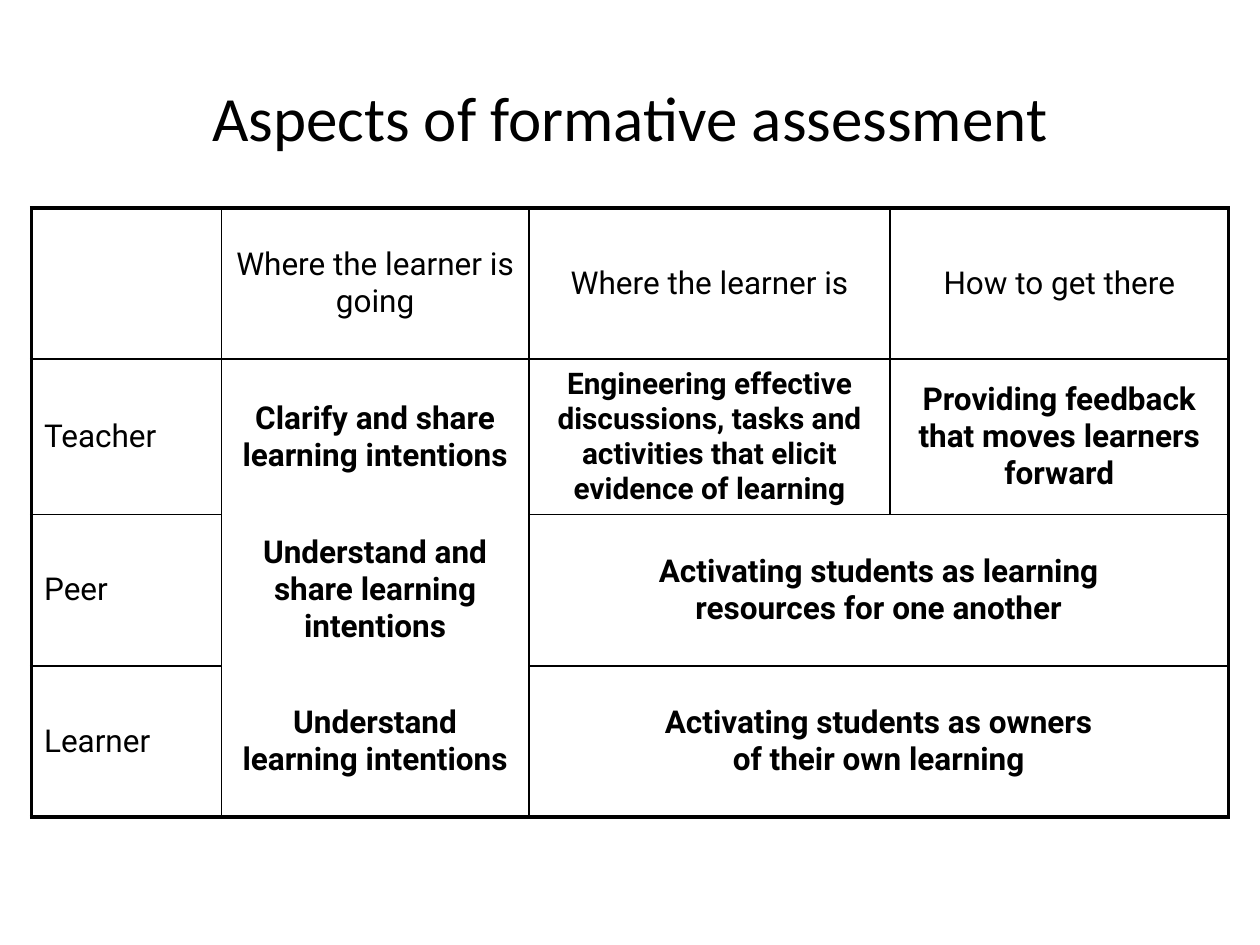
from dataclasses import dataclass

from lxml.etree import SubElement
from pptx import Presentation
from pptx.dml.color import RGBColor
from pptx.enum.text import MSO_ANCHOR, PP_ALIGN
from pptx.oxml.ns import qn
from pptx.util import Pt


@dataclass(frozen=True)
class Theme:
    ink: str = "000000"
    paper: str = "FFFFFF"
    title_font: str = "Calibri"
    table_font: str = "Roboto"
    title_size: float = 36
    cell_size: float = 18
    dense_size: float = 17
    frame_line: float = 2.25
    grid_line: float = 1


@dataclass(frozen=True)
class Box:
    left: float
    top: float
    width: float
    height: float

    def lengths(self):
        return Pt(self.left), Pt(self.top), Pt(self.width), Pt(self.height)


THEME = Theme()
COLUMN_WIDTHS = (108.5, 175.75, 206.5, 193.25)
ROW_HEIGHTS = (86.4, 88.6, 86.4, 86.4)
ASPECTS = (
    ("", "Where the learner is going", "Where the learner is", "How to get there"),
    ("Teacher", "Clarify and share learning intentions",
     "Engineering effective discussions, tasks and activities that elicit evidence of learning",
     "Providing feedback that moves learners forward"),
    ("Peer", "Understand and share learning intentions",
     "Activating students as learning\nresources for one another", ""),
    ("Learner", "Understand learning intentions",
     "Activating students as owners\vof their own learning", ""),
)
INTENTIONS_COLUMN = 1
DENSE_CELL = (1, 2)
MERGED_ROWS = (2, 3)


def write_text(frame, text, *, font, size, bold=False, align=PP_ALIGN.CENTER):
    frame.text = text
    for para in frame.paragraphs:
        para.alignment = align
        for span in para.runs:
            span.font.name = font
            span.font.size = Pt(size)
            span.font.bold = bold
            span.font.color.rgb = RGBColor.from_string(THEME.ink)


def draw_borders(cell, widths):
    properties = cell._tc.get_or_add_tcPr()
    for position, (side, width) in enumerate(widths.items()):
        line = SubElement(properties, qn(f"a:ln{side}"), w=str(Pt(width)))
        if width:
            fill = SubElement(line, qn("a:solidFill"))
            SubElement(fill, qn("a:srgbClr"), val=THEME.ink)
        else:
            SubElement(line, qn("a:noFill"))
        properties.insert(position, line)


def border_widths(row, column, merged):
    last_row, last_column = len(ROW_HEIGHTS) - 1, len(COLUMN_WIDTHS) - 1
    open_column = column == INTENTIONS_COLUMN
    inner_top = 0 if open_column and row > 1 else THEME.grid_line
    inner_bottom = 0 if open_column and row > 0 else THEME.grid_line
    if open_column and row == 0:
        inner_bottom = THEME.grid_line
    at_right = column == last_column or merged
    return {
        "L": THEME.frame_line if column == 0 else THEME.grid_line,
        "R": THEME.frame_line if at_right else THEME.grid_line,
        "T": THEME.frame_line if row == 0 else inner_top,
        "B": THEME.frame_line if row == last_row else inner_bottom,
    }


def add_title(page, box, text):
    frame = page.shapes.add_textbox(*box.lengths()).text_frame
    frame.word_wrap = True
    frame.vertical_anchor = MSO_ANCHOR.MIDDLE
    write_text(frame, text, font=THEME.title_font, size=THEME.title_size)


def add_aspects_table(page, box):
    table = page.shapes.add_table(
        len(ROW_HEIGHTS), len(COLUMN_WIDTHS), *box.lengths()).table
    table.first_row = table.horz_banding = False
    for column, width in zip(table.columns, COLUMN_WIDTHS):
        column.width = Pt(width * box.width / sum(COLUMN_WIDTHS))
    for row, height in zip(table.rows, ROW_HEIGHTS):
        row.height = Pt(height * box.height / sum(ROW_HEIGHTS))
    for row in MERGED_ROWS:
        table.cell(row, 2).merge(table.cell(row, 3))
    for row, texts in enumerate(ASPECTS):
        for column, text in enumerate(texts):
            cell = table.cell(row, column)
            cell.fill.solid()
            cell.fill.fore_color.rgb = RGBColor.from_string(THEME.paper)
            cell.vertical_anchor = MSO_ANCHOR.MIDDLE
            draw_borders(cell, border_widths(row, column, cell.is_merge_origin))
            if text:
                write_text(
                    cell.text_frame, text, font=THEME.table_font,
                    size=THEME.dense_size if (row, column) == DENSE_CELL else THEME.cell_size,
                    bold=row > 0 and column > 0,
                    align=PP_ALIGN.CENTER if column else PP_ALIGN.LEFT)


def main():
    deck = Presentation()
    deck.slide_width, deck.slide_height = Pt(720), Pt(540)
    page = deck.slides.add_slide(deck.slide_layouts[6])
    add_title(page, Box(36, 21.6, 648, 90), "Aspects of formative assessment")
    add_aspects_table(page, Box(18, 118.8, 684, sum(ROW_HEIGHTS)))
    deck.save("out.pptx")


if __name__ == "__main__":
    main()
